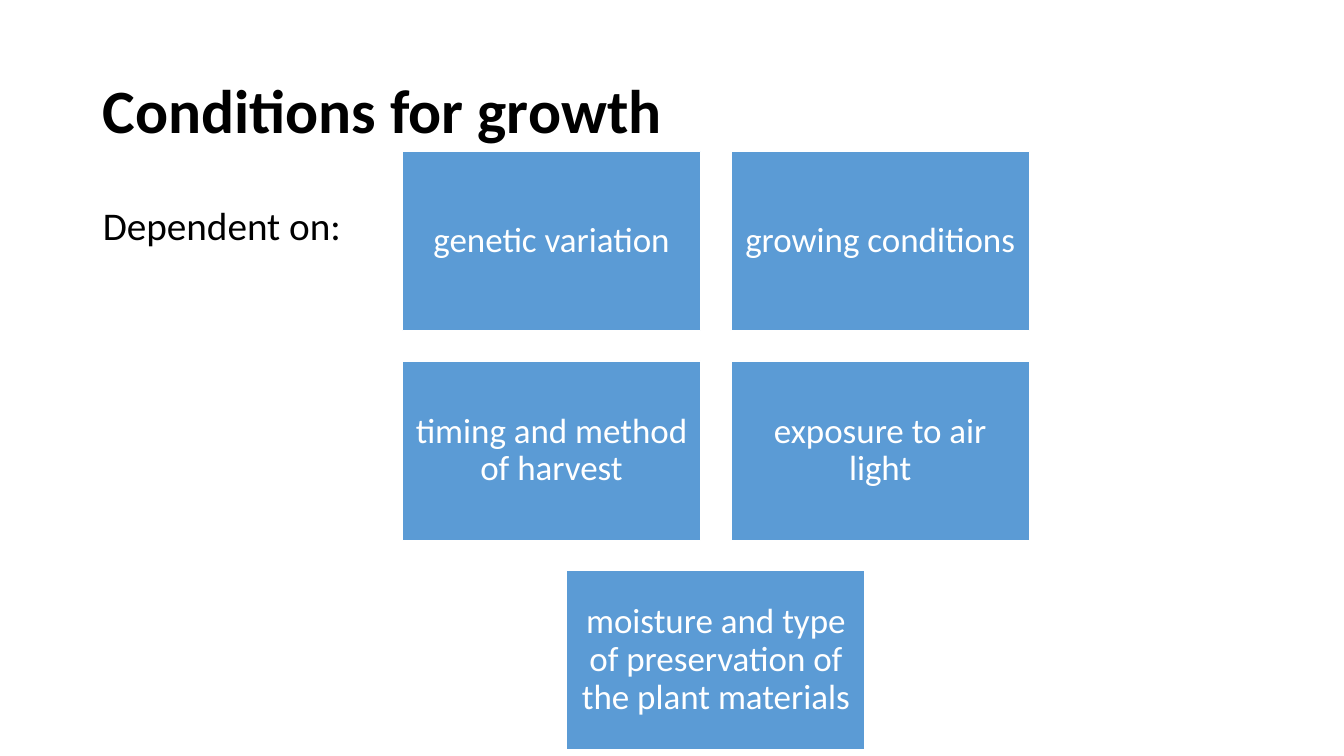
from dataclasses import dataclass

from pptx import Presentation
from pptx.dml.color import RGBColor
from pptx.enum.shapes import MSO_SHAPE
from pptx.enum.text import MSO_ANCHOR, MSO_AUTO_SIZE, PP_ALIGN
from pptx.oxml.ns import qn
from pptx.slide import Slide
from pptx.text.text import TextFrame
from pptx.util import Inches, Pt

RECTANGLE = MSO_SHAPE.RECTANGLE
TOP, MIDDLE = MSO_ANCHOR.TOP, MSO_ANCHOR.MIDDLE
LEFT, CENTER = PP_ALIGN.LEFT, PP_ALIGN.CENTER
NO_FIT = MSO_AUTO_SIZE.NONE


@dataclass(frozen=True)
class Theme:
    font: str = "Calibri"
    ink: RGBColor = RGBColor(0x00, 0x00, 0x00)
    paper: RGBColor = RGBColor(0xFF, 0xFF, 0xFF)
    tile: RGBColor = RGBColor(0x5B, 0x9B, 0xD5)
    title_size: int = 44
    lead_size: int = 28
    tile_size: int = 25
    outline: int = 1


@dataclass(frozen=True)
class Grid:
    left: float = 3.99
    top: float = 1.5
    width: float = 2.96
    height: float = 1.78
    gap: float = 0.3

    def box(self, column: float, row: float) -> list[int]:
        x = self.left + column * (self.width + self.gap)
        y = self.top + row * (self.height + self.gap)
        return [Inches(v) for v in (x, y, self.width, self.height)]


@dataclass(frozen=True)
class Condition:
    wording: str
    column: float
    row: float


THEME = Theme()
GRID = Grid()
CONDITIONS = [
    Condition("genetic variation", 0, 0),
    Condition("growing conditions", 1, 0),
    Condition("timing and method of harvest", 0, 1),
    Condition("exposure to air light", 1, 1),
    Condition("moisture and type of preservation of the plant materials", 0.5, 2),
]


def apply(target: object, values: dict) -> None:
    for key, value in values.items():
        setattr(target, key, value)


def write(frame: TextFrame, wording: str, size: int, color: RGBColor,
          align: PP_ALIGN, anchor: MSO_ANCHOR, bold: bool = False) -> None:
    frame.text = wording
    apply(frame, {"word_wrap": True, "auto_size": NO_FIT, "vertical_anchor": anchor})
    paragraph = frame.paragraphs[0]
    apply(paragraph, {"alignment": align, "line_spacing": 0.9})
    font = paragraph.runs[0].font
    apply(font, {"name": THEME.font, "size": Pt(size), "bold": bold})
    font.color.rgb = color


def place(shape: object, left: float, top: float, width: float, height: float) -> None:
    apply(shape, {"left": Inches(left), "top": Inches(top),
                  "width": Inches(width), "height": Inches(height)})


def draw_condition(slide: Slide, condition: Condition) -> None:
    tile = slide.shapes.add_shape(RECTANGLE, *GRID.box(condition.column, condition.row))
    tile.shadow.inherit = False
    tile.fill.solid()
    tile.fill.fore_color.rgb = THEME.tile
    tile.line.color.rgb = THEME.paper
    tile.line.width = Pt(THEME.outline)
    sides = ("left", "top", "right", "bottom")
    apply(tile.text_frame, {f"margin_{side}": Inches(0.1) for side in sides})
    write(tile.text_frame, condition.wording, THEME.tile_size, THEME.paper, CENTER, MIDDLE)


def main() -> None:
    deck = Presentation()
    apply(deck, {"slide_width": Inches(13.33), "slide_height": Inches(7.5)})
    slide = deck.slides.add_slide(deck.slide_layouts[1])

    heading, lead = slide.placeholders
    place(heading, 0.92, 0.4, 11.5, 1.45)
    write(heading.text_frame, "Conditions for growth", THEME.title_size,
          THEME.ink, LEFT, MIDDLE, bold=True)

    place(lead, 0.92, 2, 11.5, 4.76)
    write(lead.text_frame, "Dependent on:", THEME.lead_size, THEME.ink, LEFT, TOP)
    lead_line = lead.text_frame.paragraphs[0]
    lead_line.space_before = Pt(10)
    properties = lead_line._p.get_or_add_pPr()
    for key, value in {"marL": "0", "indent": "0"}.items():
        properties.set(key, value)
    properties.append(properties.makeelement(qn("a:buNone"), {}))

    for condition in CONDITIONS:
        draw_condition(slide, condition)

    deck.save("out.pptx")


if __name__ == "__main__":
    main()
